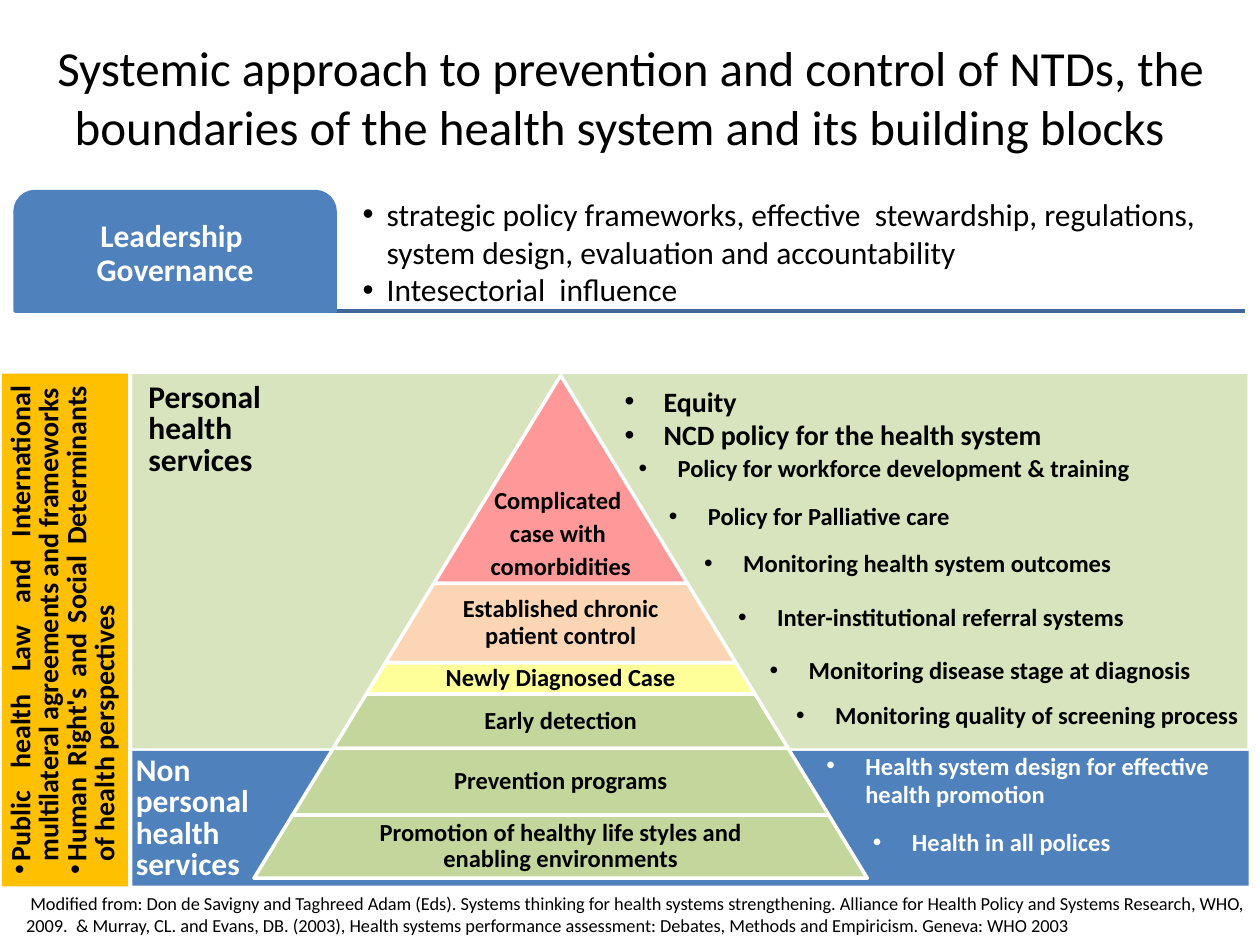
from lxml import etree
from pptx import Presentation
from pptx.dml.color import RGBColor
from pptx.enum import shapes, text
from pptx.oxml import ns
from pptx.util import Inches, Pt

BLACK = RGBColor(0x00, 0x00, 0x00)
WHITE = RGBColor(0xFF, 0xFF, 0xFF)
BLUE = RGBColor(0x4F, 0x81, 0xBD)
DARK_BLUE = RGBColor(0x3F, 0x67, 0x97)
PALE_GREEN = RGBColor(0xD7, 0xE4, 0xBD)
GREEN = RGBColor(0xC3, 0xD6, 0x9B)
AMBER = RGBColor(0xFF, 0xC0, 0x00)
RED = RGBColor(0xFF, 0x99, 0x99)
PEACH = RGBColor(0xFC, 0xD5, 0xB5)
YELLOW = RGBColor(0xFF, 0xFF, 0x99)

TITLE = ("Systemic approach to prevention and control of NTDs, "
         "the boundaries of the health system and its building blocks  ")
LEADERSHIP = ["Leadership \vGovernance"]
GOVERNANCE = [
    "strategic policy frameworks, effective  stewardship, regulations,  "
    "system design, evaluation and accountability",
    "Intesectorial  influence",
]
LAW = [
    "Public health Law and International multilateral agreements and frameworks",
    "Human Right's and Social Determinants of health perspectives",
]
SOURCE = [
    " Modified from: Don de Savigny and Taghreed Adam (Eds). Systems thinking for "
    "health systems strengthening. Alliance for Health Policy and Systems Research, "
    "WHO, 2009.  & Murray, CL. and Evans, DB. (2003), Health systems performance "
    "assessment: Debates, Methods and Empiricism. Geneva: WHO 2003"
]

# Panel: place, fill, label, label place, label colour
PANELS = [
    ((1.05, 5.96, 8.86, 1.07), BLUE, "Non personal health services",
     (0.98, 5.95, 1.18, 1.42), WHITE),
    ((1.05, 2.97, 8.85, 2.97), PALE_GREEN, "Personal health services",
     (1.08, 2.99, 1.57, 0.86), BLACK),
]

# Pyramid level: bottom edge, fill, lines of text
APEX_X, APEX_Y, SLOPE = 4.45, 2.98, 0.61
LEVELS = [
    (4.63, RED, ["Complicated ", "case with ", "comorbidities"]),
    (5.26, PEACH, ["Established chronic patient control"]),
    (5.51, YELLOW, ["Newly Diagnosed Case"]),
    (5.94, GREEN, ["Early detection"]),
    (6.47, GREEN, ["Prevention programs"]),
    (6.97, GREEN, ["Promotion of healthy life styles and enabling environments"]),
]

# Policy: place, lines of text, formats that differ from the usual ones
ON_BLUE = {"color": WHITE, "spacing": Pt(16)}
POLICIES = [
    ((4.86, 3, 4.24, 0.91), ["Equity", "NCD policy for the health system"], {"size": 16}),
    ((4.97, 3.55, 4.9, 0.37), ["Policy for workforce development & training"], {}),
    ((5.21, 3.93, 4.69, 0.37), ["Policy for Palliative care"], {}),
    ((5.49, 4.3, 4.2, 0.37), ["Monitoring health system outcomes"], {}),
    ((5.76, 4.73, 4.2, 0.37), ["Inter-institutional referral systems"], {}),
    ((6.01, 5.15, 3.8, 0.34), ["Monitoring disease stage at diagnosis"], {}),
    ((6.22, 5.51, 3.77, 0.34), ["Monitoring quality of screening process"], {}),
    ((6.46, 5.92, 3.34, 0.55), ["Health system design for effective health promotion"], ON_BLUE),
    ((6.83, 6.53, 3.06, 0.33), ["Health in all polices"], ON_BLUE),
]


def write(shape, lines, size=14, color=BLACK, bold=True, align=text.PP_ALIGN.LEFT,
          spacing=None, after=0, hang=0, anchor=text.MSO_ANCHOR.TOP, insets=None):
    """Fill a shape with paragraphs; a hang above 0 gives them bullets."""
    frame = shape.text_frame
    frame.word_wrap = True
    frame.vertical_anchor = anchor
    for side, inset in (insets or {}).items():
        setattr(frame, "margin_" + side, Inches(inset))
    for number, line in enumerate(lines):
        para = frame.add_paragraph() if number else frame.paragraphs[0]
        para.text = line
        formats = {"alignment": align, "line_spacing": spacing, "space_after": Pt(after)}
        for name, value in formats.items():
            setattr(para, name, value)
        for span in para.runs:
            for name, value in {"name": "Calibri", "size": Pt(size), "bold": bold}.items():
                setattr(span.font, name, value)
            span.font.color.rgb = color
        if hang:
            props = para._p.get_or_add_pPr()
            props.set("marL", str(Inches(hang)))
            props.set("indent", str(-Inches(hang)))
            etree.SubElement(props, ns.qn("a:buFont")).set("typeface", "Arial")
            etree.SubElement(props, ns.qn("a:buChar")).set("char", "•")


def paint(shape, fill, line=None):
    shape.shadow.inherit = False
    shape.fill.solid()
    shape.fill.fore_color.rgb = fill
    if line is None:
        shape.line.fill.background()
    else:
        shape.line.color.rgb = line
        shape.line.width = Pt(2)


def add_box(page, place, lines, **formats):
    box = page.shapes.add_textbox(*map(Inches, place))
    write(box, lines, **formats)


def add_block(page, kind, place, fill, line=None):
    block = page.shapes.add_shape(kind, *map(Inches, place))
    paint(block, fill, line)
    return block


def add_level(page, top, bottom, fill, lines):
    """Cut one slice of the pyramid between two heights."""
    upper, lower = ((y - APEX_Y) * SLOPE for y in (top, bottom))
    corners = [(APEX_X - lower, bottom), (APEX_X - upper, top),
               (APEX_X + upper, top), (APEX_X + lower, bottom)]
    points = [(Inches(x), Inches(y)) for x, y in corners]
    builder = page.shapes.build_freeform(*points[0])
    builder.add_line_segments(points[1:], close=True)
    level = builder.convert_to_shape()
    paint(level, fill, WHITE)
    is_tip = upper == 0
    side = 0.02 if is_tip else lower * 0.36
    write(level, lines, align=text.PP_ALIGN.CENTER,
          spacing=Pt(14) if is_tip else 0.9, after=5 if is_tip else 0,
          anchor=text.MSO_ANCHOR.BOTTOM if is_tip else text.MSO_ANCHOR.MIDDLE,
          insets={"left": side, "right": side, "top": 0.02, "bottom": 0.02})


def main():
    deck = Presentation()
    deck.slide_width, deck.slide_height = Inches(10), Inches(7.5)
    page = deck.slides.add_slide(deck.slide_layouts[5])

    title = page.shapes.title
    title.left, title.top, title.width, title.height = map(Inches, (0.28, 0.14, 9.45, 1.25))
    write(title, [TITLE], size=28, bold=False, align=text.PP_ALIGN.CENTER,
          anchor=text.MSO_ANCHOR.MIDDLE)

    for place, fill, label, label_place, color in PANELS:
        add_block(page, shapes.MSO_SHAPE.RECTANGLE, place, fill)
        add_box(page, label_place, [label], size=18, color=color, spacing=Pt(18))

    top = APEX_Y
    for bottom, fill, lines in LEVELS:
        add_level(page, top, bottom, fill, lines)
        top = bottom

    for place, lines, formats in POLICIES:
        add_box(page, place, lines, hang=0.31, **formats)

    law = add_block(page, shapes.MSO_SHAPE.RECTANGLE, (-1.52, 4.5, 4.07, 1), AMBER)
    law.rotation = 270
    write(law, LAW, size=16, align=text.PP_ALIGN.JUSTIFY, spacing=Pt(16), hang=0.1)

    rule = page.shapes.add_connector(shapes.MSO_CONNECTOR.STRAIGHT,
                                     *map(Inches, (0.12, 2.47, 9.88, 2.47)))
    rule.line.color.rgb = DARK_BLUE
    rule.line.width = Pt(2)
    etree.SubElement(rule._element.spPr, ns.qn("a:effectLst"))

    tab = add_block(page, shapes.MSO_SHAPE.ROUND_2_SAME_RECTANGLE,
                    (0.12, 1.52, 2.54, 0.95), BLUE, BLUE)
    write(tab, LEADERSHIP, size=18, color=WHITE, align=text.PP_ALIGN.CENTER,
          spacing=0.9, anchor=text.MSO_ANCHOR.MIDDLE,
          insets={"left": 0.07, "right": 0.07, "top": 0.03, "bottom": 0.03})
    add_box(page, (2.78, 1.49, 7.01, 1.01), GOVERNANCE, size=18, bold=False,
            hang=0.19, anchor=text.MSO_ANCHOR.MIDDLE)
    add_box(page, (0.11, 7.03, 9.88, 0.45), SOURCE, size=10.5, bold=False)

    deck.save("out.pptx")


if __name__ == "__main__":
    main()
